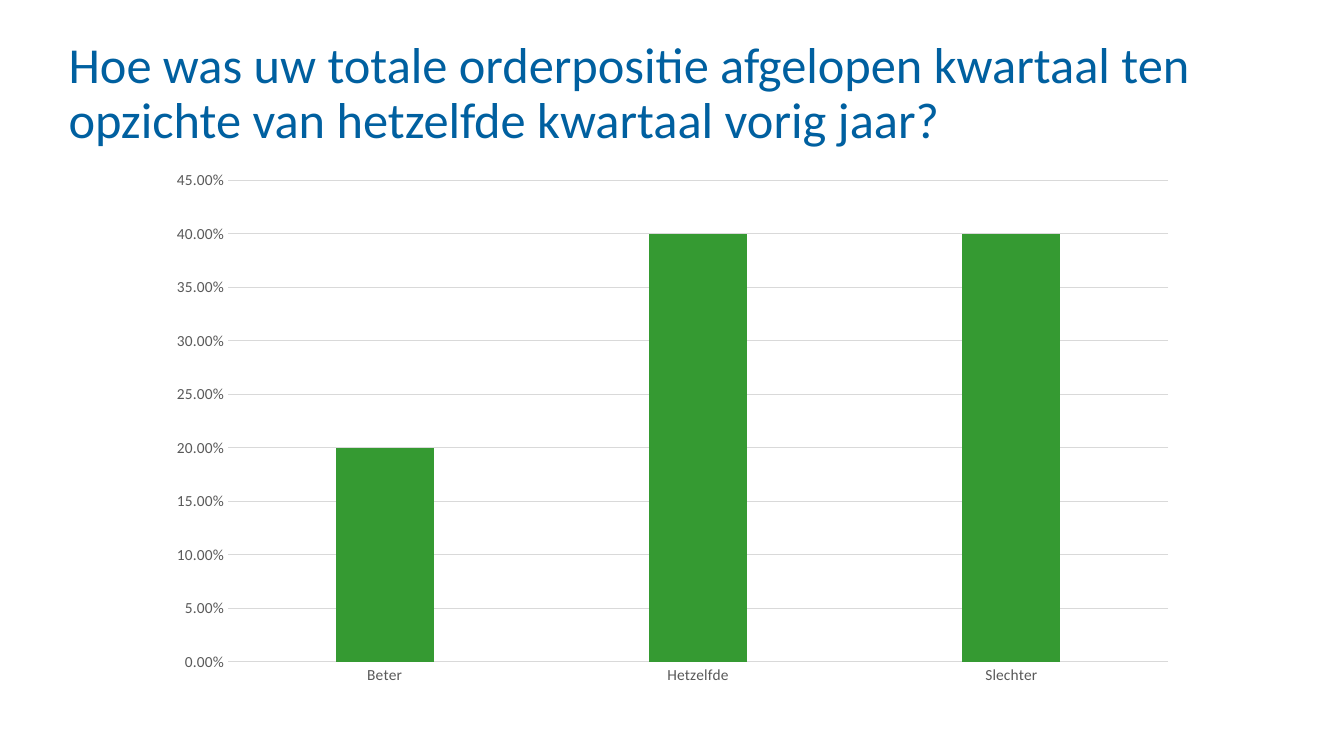
from pptx import Presentation
from pptx.chart.data import CategoryChartData
from pptx.dml.color import RGBColor
from pptx.enum.chart import XL_CHART_TYPE, XL_TICK_MARK
from pptx.enum.text import MSO_ANCHOR, PP_ALIGN
from pptx.util import Inches, Pt

COLUMNS = XL_CHART_TYPE.COLUMN_CLUSTERED
NO_TICK = XL_TICK_MARK.NONE
TOP = MSO_ANCHOR.TOP
LEFT = PP_ALIGN.LEFT

FONT = "Calibri"
BLUE, GREEN, GREY, LIGHT_GREY = "0060A0", "359A32", "595959", "D9D9D9"

QUESTION = ("Hoe was uw totale orderpositie afgelopen kwartaal ten opzichte "
            "van hetzelfde kwartaal vorig jaar?")
ANSWERS = {"Beter": 0.2, "Hetzelfde": 0.4, "Slechter": 0.4}


def rgb(hex_color):
    return RGBColor.from_string(hex_color)


def style_font(font, size, color):
    font.name = FONT
    font.size = Pt(size)
    font.color.rgb = rgb(color)


def style_line(line):
    line.color.rgb = rgb(LIGHT_GREY)
    line.width = Pt(0.75)


def add_question(slide, left, top, width, height):
    box = slide.shapes.add_textbox(
        Inches(left), Inches(top), Inches(width), Inches(height))
    frame = box.text_frame
    frame.word_wrap = True
    frame.vertical_anchor = TOP
    frame.margin_left = frame.margin_right = 0
    frame.margin_top = frame.margin_bottom = 0
    frame.text = QUESTION
    paragraph = frame.paragraphs[0]
    paragraph.alignment = LEFT
    paragraph.line_spacing = 0.9
    style_font(paragraph.runs[0].font, 36, BLUE)


def add_answer_chart(slide, left, top, width, height):
    answers = CategoryChartData(number_format="0.00%")
    answers.categories = list(ANSWERS)
    answers.add_series("Series 1", list(ANSWERS.values()))
    chart = slide.shapes.add_chart(
        COLUMNS, Inches(left), Inches(top), Inches(width), Inches(height),
        answers).chart
    chart.has_legend = False
    chart.has_title = False
    style_font(chart.font, 10, "000000")

    # Columns
    plot = chart.plots[0]
    plot.gap_width = 219
    plot.overlap = -27
    plot.vary_by_categories = False
    fill = plot.series[0].format.fill
    fill.solid()
    fill.fore_color.rgb = rgb(GREEN)

    # Axes
    answer_axis, share_axis = chart.category_axis, chart.value_axis
    for axis in (answer_axis, share_axis):
        axis.major_tick_mark = axis.minor_tick_mark = NO_TICK
        style_font(axis.tick_labels.font, 11, GREY)
    style_line(answer_axis.format.line)
    share_axis.format.line.fill.background()
    share_axis.has_major_gridlines = True
    style_line(share_axis.major_gridlines.format.line)
    share_axis.minimum_scale = 0
    share_axis.maximum_scale = 0.45
    share_axis.major_unit = 0.05
    share_axis.tick_labels.number_format = "0.00%"
    share_axis.tick_labels.number_format_is_linked = False


def main():
    prs = Presentation()
    prs.slide_width, prs.slide_height = Inches(13.33), Inches(7.5)
    slide = prs.slides.add_slide(prs.slide_layouts[6])
    add_question(slide, 0.68, 0.4, 11.95, 0.76)
    add_answer_chart(slide, 1.55, 1.59, 10.24, 5.31)
    prs.save("out.pptx")


if __name__ == "__main__":
    main()
